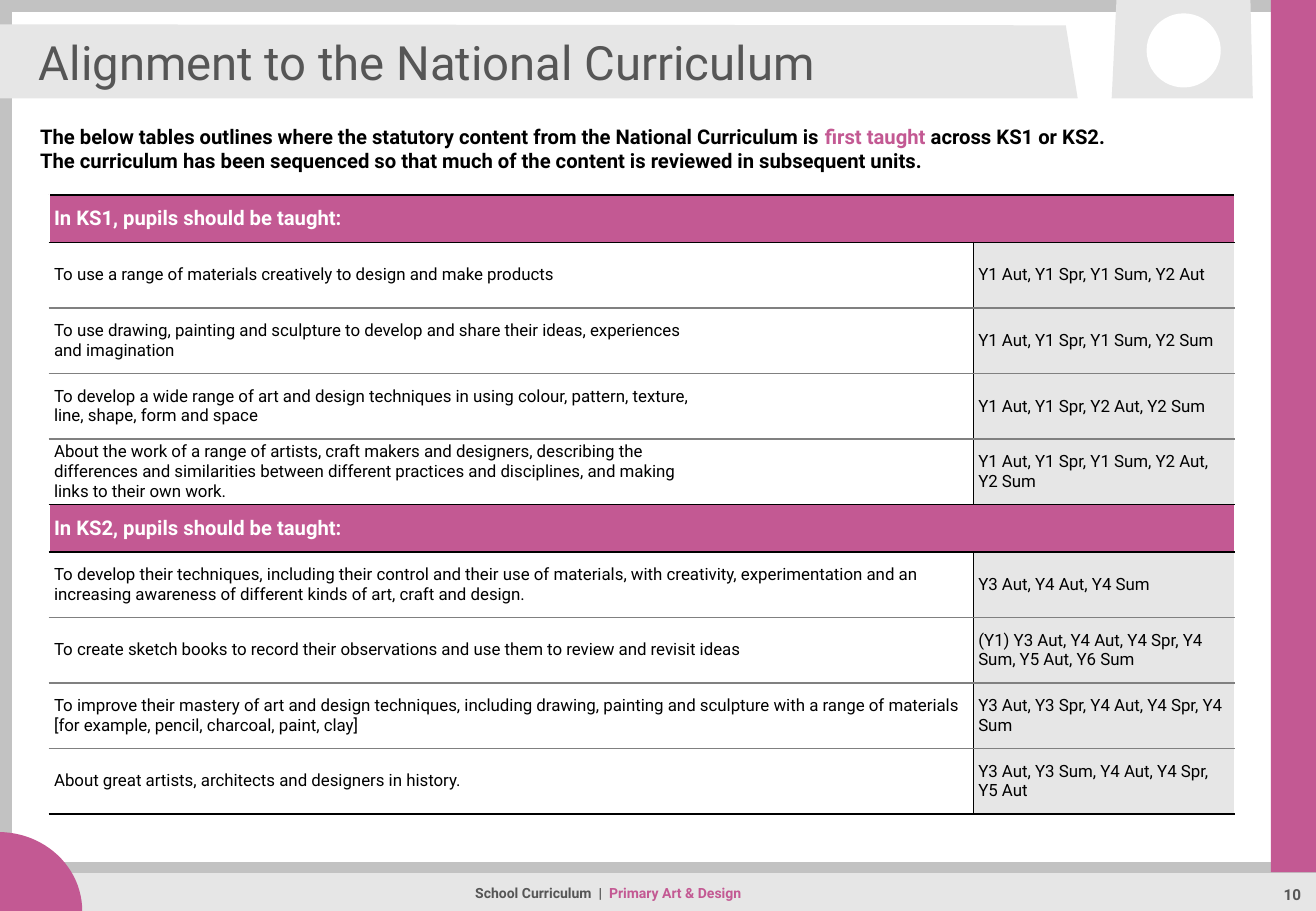
from lxml import etree
from pptx import Presentation
from pptx.dml.color import RGBColor
from pptx.enum.shapes import MSO_CONNECTOR, MSO_SHAPE
from pptx.enum.text import MSO_ANCHOR, MSO_AUTO_SIZE, PP_ALIGN
from pptx.oxml.ns import qn
from pptx.util import Cm, Pt

RECTANGLE, OVAL, ARC = MSO_SHAPE.RECTANGLE, MSO_SHAPE.OVAL, MSO_SHAPE.ARC
STRAIGHT = MSO_CONNECTOR.STRAIGHT
LEFT, CENTER = PP_ALIGN.LEFT, PP_ALIGN.CENTER
TOP, MIDDLE = MSO_ANCHOR.TOP, MSO_ANCHOR.MIDDLE
NO_AUTOFIT = MSO_AUTO_SIZE.NONE

FONT = "Roboto"
PINK, PALE, SILVER, SLATE = "C35993", "E6E6E6", "C2C2C2", "565656"
BLACK, WHITE, GREY = "000000", "FFFFFF", "808080"
WIDTH, HEIGHT = 27.51, 19.05

TABLE_SECTIONS = [
    ("In KS1, pupils should be taught:", [
        ("To use a range of materials creatively to design and make products",
         "Y1 Aut, Y1 Spr, Y1 Sum, Y2 Aut"),
        ("To use drawing, painting and sculpture to develop and share their ideas, experiences\n"
         "and imagination",
         "Y1 Aut, Y1 Spr, Y1 Sum, Y2 Sum"),
        ("To develop a wide range of art and design techniques in using colour, pattern, texture,\n"
         "line, shape, form and space",
         "Y1 Aut, Y1 Spr, Y2 Aut, Y2 Sum"),
        ("About the work of a range of artists, craft makers and designers, describing the\n"
         "differences and similarities between different practices and disciplines, and making\n"
         "links to their own work.",
         "Y1 Aut, Y1 Spr, Y1 Sum, Y2 Aut, Y2 Sum"),
    ]),
    ("In KS2, pupils should be taught:", [
        ("To develop their techniques, including their control and their use of materials, with "
         "creativity, experimentation and an increasing awareness of different kinds of art, "
         "craft and design.",
         "Y3 Aut, Y4 Aut, Y4 Sum"),
        ("To create sketch books to record their observations and use them to review and "
         "revisit ideas",
         "(Y1) Y3 Aut, Y4 Aut, Y4 Spr, Y4 Sum, Y5 Aut, Y6 Sum"),
        ("To improve their mastery of art and design techniques, including drawing, painting "
         "and sculpture with a range of materials [for example, pencil, charcoal, paint, clay]",
         "Y3 Aut, Y3 Spr, Y4 Aut, Y4 Spr, Y4 Sum"),
        ("About great artists, architects and designers in history.",
         "Y3 Aut, Y3 Sum, Y4 Aut, Y4 Spr, Y5 Aut"),
    ]),
]


def color(value):
    return RGBColor.from_string(value)


def add_text(paragraph, text, size=10, fill=BLACK, bold=False):
    run = paragraph.add_run()
    run.text = text
    run.font.name = FONT
    run.font.size = Pt(size)
    run.font.bold = bold
    run.font.color.rgb = color(fill)


class SlideBuilder:
    def __init__(self, presentation):
        self.slide = presentation.slides.add_slide(presentation.slide_layouts[5])
        self.shapes = self.slide.shapes

    def paint(self, shape, fill):
        shape.shadow.inherit = False
        shape.fill.solid()
        shape.fill.fore_color.rgb = color(fill)
        shape.line.fill.background()

    def shape(self, kind, box, fill):
        self.paint(self.shapes.add_shape(kind, *map(Cm, box)), fill)

    def outline(self, contours, fill):
        contours = [[(Cm(x), Cm(y)) for x, y in contour] for contour in contours]
        builder = self.shapes.build_freeform(*contours[0][0])
        for index, contour in enumerate(contours):
            if index:
                builder.move_to(*contour[0])
            builder.add_line_segments(contour[1:], close=True)
        self.paint(builder.convert_to_shape(), fill)

    def line(self, start, end, fill, width):
        connector = self.shapes.add_connector(STRAIGHT, *map(Cm, start + end))
        connector.line.color.rgb = color(fill)
        connector.line.width = Pt(width)
        etree.SubElement(connector._element.spPr, qn("a:effectLst"))

    def fill_frame(self, shape, runs, align, anchor, spacing, **style):
        frame = shape.text_frame
        frame.word_wrap = True
        frame.auto_size = NO_AUTOFIT
        frame.vertical_anchor = anchor
        paragraph = frame.paragraphs[0]
        paragraph.alignment = align
        paragraph.line_spacing = spacing
        for text, fill in runs:
            add_text(paragraph, text, fill=fill, **style)

    def text(self, box, runs, align=LEFT, anchor=TOP, spacing=1.0, **style):
        shape = self.shapes.add_textbox(*map(Cm, box))
        self.fill_frame(shape, runs, align, anchor, spacing, **style)

    def title(self, box, text):
        title = self.shapes.title
        title.left, title.top, title.width, title.height = map(Cm, box)
        self.fill_frame(title, [(text, SLATE)], LEFT, MIDDLE, 1.0, size=28)
        title._element.getparent().append(title._element)

    def cell(self, cell, text, background, borders, **style):
        cell.margin_left = cell.margin_right = Cm(0.1)
        cell.margin_top = cell.margin_bottom = Cm(0.05)
        cell.vertical_anchor = MIDDLE
        frame = cell.text_frame
        for index, line in enumerate(text.splitlines()):
            paragraph = frame.add_paragraph() if index else frame.paragraphs[0]
            add_text(paragraph, line, **style)
        properties = cell._tc.get_or_add_tcPr()
        for side, border in zip("LRTB", borders):
            line = etree.SubElement(properties, qn(f"a:ln{side}"), w=str(Pt(1)))
            solid = etree.SubElement(line, qn("a:solidFill"))
            etree.SubElement(solid, qn("a:srgbClr"), val=border)
        cell.fill.solid()
        cell.fill.fore_color.rgb = color(background)

    def table(self, left, top, widths, header_height, row_height, sections):
        row_count = sum(1 + len(entries) for _, entries in sections)
        height = header_height * len(sections) + row_height * (row_count - len(sections))
        frame = self.shapes.add_table(row_count, len(widths), Cm(left), Cm(top),
                                      Cm(sum(widths)), Cm(height))
        table = frame.table
        table.first_row = table.horz_banding = False
        for column, width in zip(table.columns, widths):
            column.width = Cm(width)
        row = 0
        for heading, entries in sections:
            table.rows[row].height = Cm(header_height)
            table.cell(row, 0).merge(table.cell(row, 1))
            for column, text in enumerate((heading, "")):
                self.cell(table.cell(row, column), text, PINK, (WHITE, WHITE, BLACK, BLACK),
                          size=12, fill=WHITE, bold=True)
            row += 1
            for index, (content, terms) in enumerate(entries):
                table.rows[row].height = Cm(row_height)
                above = GREY if index else BLACK
                below = GREY if index < len(entries) - 1 else BLACK
                self.cell(table.cell(row, 0), content, WHITE, (WHITE, BLACK, above, below))
                self.cell(table.cell(row, 1), terms, PALE, (BLACK, WHITE, above, below))
                row += 1


def main():
    presentation = Presentation()
    presentation.slide_width, presentation.slide_height = Cm(WIDTH), Cm(HEIGHT)
    builder = SlideBuilder(presentation)

    builder.outline([
        [(0, 0), (WIDTH, 0), (WIDTH, HEIGHT), (0, HEIGHT)],
        [(0.25, 0.25), (0.25, 18.82), (27.25, 18.82), (27.25, 0.25)],
    ], SILVER)
    builder.shape(RECTANGLE, (0.81, 18.24, 26.7, 0.81), PALE)
    builder.line((0.13, 18.14), (WIDTH, 18.14), SILVER, 7)
    builder.shape(ARC, (-1.78, 17.4, 3.5, 3.3), PINK)
    builder.text((5.21, 18.31, 15.01, 0.76),
                 [("School Curriculum  |  ", SLATE), ("Primary Art & Design", PINK)],
                 CENTER, MIDDLE, 0.9, size=8.3, bold=True)
    builder.outline([[(0, 0.51), (0, 2.06), (22.53, 2.06), (22.28, 0.53)]], PALE)
    builder.shape(RECTANGLE, (26.57, 0, 0.94, 18.24), PINK)
    builder.text((26.2, 18.31, 1.63, 0.71), [("10", SLATE)], CENTER, TOP, 1.2,
                 size=9, bold=True)
    builder.outline([[(23.24, 2.06), (26.19, 2.06), (26.14, 0), (23.34, 0)]], PALE)
    builder.shape(OVAL, (23.97, 0.28, 1.55, 1.55), WHITE)

    builder.title((0.56, 0.66, 22.38, 1.27), "Alignment to the National Curriculum")
    builder.text((0.59, 2.47, 23.04, 1.27), [
        ("The below tables outlines where the statutory content from the National Curriculum is ",
         BLACK),
        ("first taught ", PINK),
        ("across KS1 or KS2. The curriculum has been sequenced so that much of the content is "
         "reviewed in subsequent units.", BLACK),
    ], size=12, bold=True)
    builder.table(1.03, 4.08, (19.32, 5.46), 0.99, 1.37, TABLE_SECTIONS)
    presentation.save("out.pptx")


if __name__ == "__main__":
    main()
